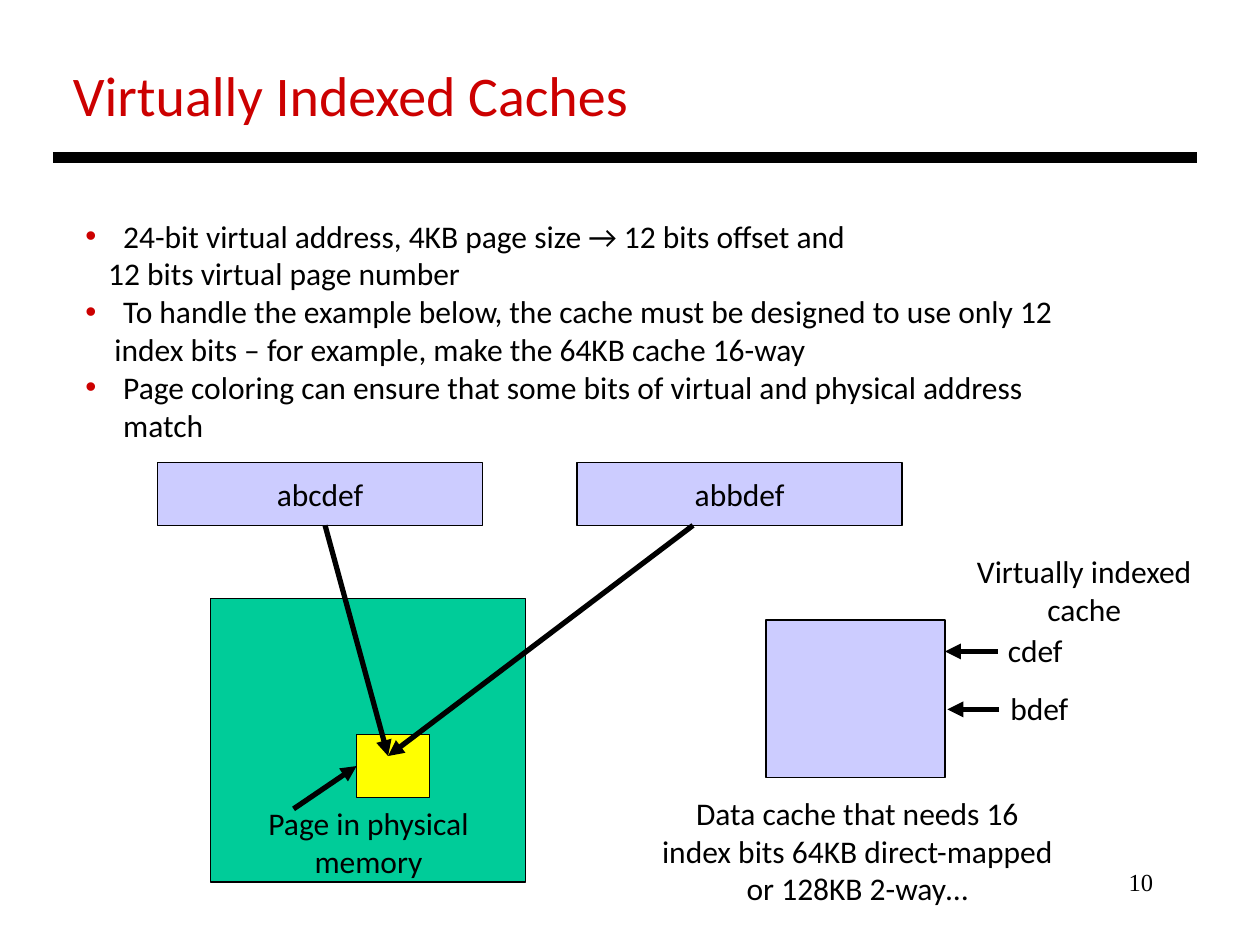
from pptx import Presentation
from pptx.dml.color import RGBColor
from pptx.enum.shapes import MSO_CONNECTOR, MSO_SHAPE
from pptx.enum.text import MSO_ANCHOR, PP_ALIGN
from pptx.oxml.ns import qn
from pptx.util import Inches, Pt
from lxml import etree

# Content: places are (left, top, width, height) in inches
TITLE = ("Virtually Indexed Caches", (0.48, 0.43, 4.66, 0.64))
PAGE_NUMBER = ("10", (7.17, 6.83, 2.08, 0.5))

BULLET_PLACE = (0.58, 1.67, 8.1, 1.62)
BULLET_INDENT = 0.3
# (text, has bullet, left margin)
BULLETS = [
    ("24-bit virtual address, 4KB page size → 12 bits offset and", True, BULLET_INDENT),
    ("12 bits virtual page number", False, 0.18),
    ("To handle the example below, the cache must be designed to use only 12", True, BULLET_INDENT),
    ("index bits – for example, make the 64KB cache 16-way", False, 0.23),
    ("Page coloring can ensure that some bits of virtual and physical address match", True, BULLET_INDENT),
]

# (text, fill, place)
BOXES = [
    ("abcdef", "address", (1.25, 3.67, 2.58, 0.5)),
    ("abbdef", "address", (4.58, 3.67, 2.58, 0.5)),
    ("", "memory", (1.67, 4.75, 2.5, 2.25)),
    ("", "page", (2.83, 5.83, 0.58, 0.5)),
    ("", "address", (6.08, 4.92, 1.42, 1.25)),
]

# (lines, alignment, place)
LABELS = [
    (["Page in physical", "memory"], PP_ALIGN.CENTER, (2.02, 6.33, 1.81, 0.71)),
    (["Data cache that needs 16", "index bits 64KB direct-mapped", "or 128KB 2-way…"],
     PP_ALIGN.CENTER, (5.13, 6.25, 3.35, 1.01)),
    (["cdef"], PP_ALIGN.LEFT, (7.9, 4.96, 0.64, 0.4)),
    (["bdef"], PP_ALIGN.LEFT, (7.92, 5.42, 0.69, 0.4)),
    (["Virtually indexed", "cache"], PP_ALIGN.CENTER, (7.64, 4.33, 1.93, 0.71)),
]

RULE = ((0.42, 1.25), (9.5, 1.25))
PAGE_TARGET = (3.08, 6)
ARROWS = [
    ((2.58, 4.17), PAGE_TARGET),
    ((5.5, 4.17), PAGE_TARGET),
    ((2.33, 6.42), (2.83, 6.08)),
    ((7.92, 5.17), (7.5, 5.17)),
    ((7.93, 5.63), (7.52, 5.63)),
]

THEME = {
    "font": "Calibri", "number_font": "Times New Roman",
    "title_size": 32, "body_size": 18, "number_size": 14,
    "ink": "000000", "accent": "CC0000",
    "address": "CCCCFF", "memory": "00CC99", "page": "FFFF00",
    "outline": 0.75, "arrow": 3, "rule": 6,
}


def color(name):
    return RGBColor.from_string(THEME[name])


def write_lines(frame, lines, align=PP_ALIGN.LEFT, size="body_size", ink="ink", font="font"):
    for index, line in enumerate(lines):
        paragraph = frame.paragraphs[0] if index == 0 else frame.add_paragraph()
        paragraph.alignment = align
        run = paragraph.add_run()
        run.text = line
        run.font.name = THEME[font]
        run.font.size = Pt(THEME[size])
        run.font.color.rgb = color(ink)


def add_text(slide, lines, place, wrap=False, **style):
    frame = slide.shapes.add_textbox(*map(Inches, place)).text_frame
    frame.word_wrap = wrap
    write_lines(frame, lines, **style)
    return frame


def set_margin(paragraph, margin, bulleted):
    properties = paragraph._p.get_or_add_pPr()
    properties.set("marL", str(Inches(margin)))
    properties.set("indent", str(-Inches(margin) if bulleted else 0))
    if bulleted:
        bullet_color = etree.SubElement(properties, qn("a:buClr"))
        etree.SubElement(bullet_color, qn("a:srgbClr"), val=THEME["accent"])
        etree.SubElement(properties, qn("a:buFont"), typeface="Arial")
        etree.SubElement(properties, qn("a:buChar"), char="•")


def add_box(slide, text, fill, place):
    box = slide.shapes.add_shape(MSO_SHAPE.RECTANGLE, *map(Inches, place))
    box.shadow.inherit = False
    box.fill.solid()
    box.fill.fore_color.rgb = color(fill)
    box.line.color.rgb = color("ink")
    box.line.width = Pt(THEME["outline"])
    if text:
        box.text_frame.vertical_anchor = MSO_ANCHOR.MIDDLE
        write_lines(box.text_frame, [text], PP_ALIGN.CENTER)


def add_line(slide, start, end, width, arrow=False):
    line = slide.shapes.add_connector(MSO_CONNECTOR.STRAIGHT, *map(Inches, start + end))
    line.line.color.rgb = color("ink")
    line.line.width = Pt(THEME[width])
    if arrow:
        etree.SubElement(line.line._get_or_add_ln(), qn("a:tailEnd"), type="triangle")
    etree.SubElement(line._element.spPr, qn("a:effectLst"))


def main():
    deck = Presentation()
    deck.slide_width, deck.slide_height = Inches(10), Inches(7.5)
    slide = deck.slides.add_slide(deck.slide_layouts[6])

    # Heading, rule and page number
    title, title_place = TITLE
    add_text(slide, [title], title_place, size="title_size", ink="accent")
    add_line(slide, *RULE, "rule")
    number, number_place = PAGE_NUMBER
    add_text(slide, [number], number_place, wrap=True, align=PP_ALIGN.RIGHT,
             size="number_size", font="number_font")

    # Bullet list
    bullet_frame = add_text(slide, [text for text, _, _ in BULLETS], BULLET_PLACE, wrap=True)
    for paragraph, (_, bulleted, margin) in zip(bullet_frame.paragraphs, BULLETS):
        set_margin(paragraph, margin, bulleted)

    # Address, memory and cache diagram
    for box in BOXES:
        add_box(slide, *box)
    for start, end in ARROWS:
        add_line(slide, start, end, "arrow", arrow=True)
    for lines, align, place in LABELS:
        add_text(slide, lines, place, align=align)

    deck.save("out.pptx")


if __name__ == "__main__":
    main()
